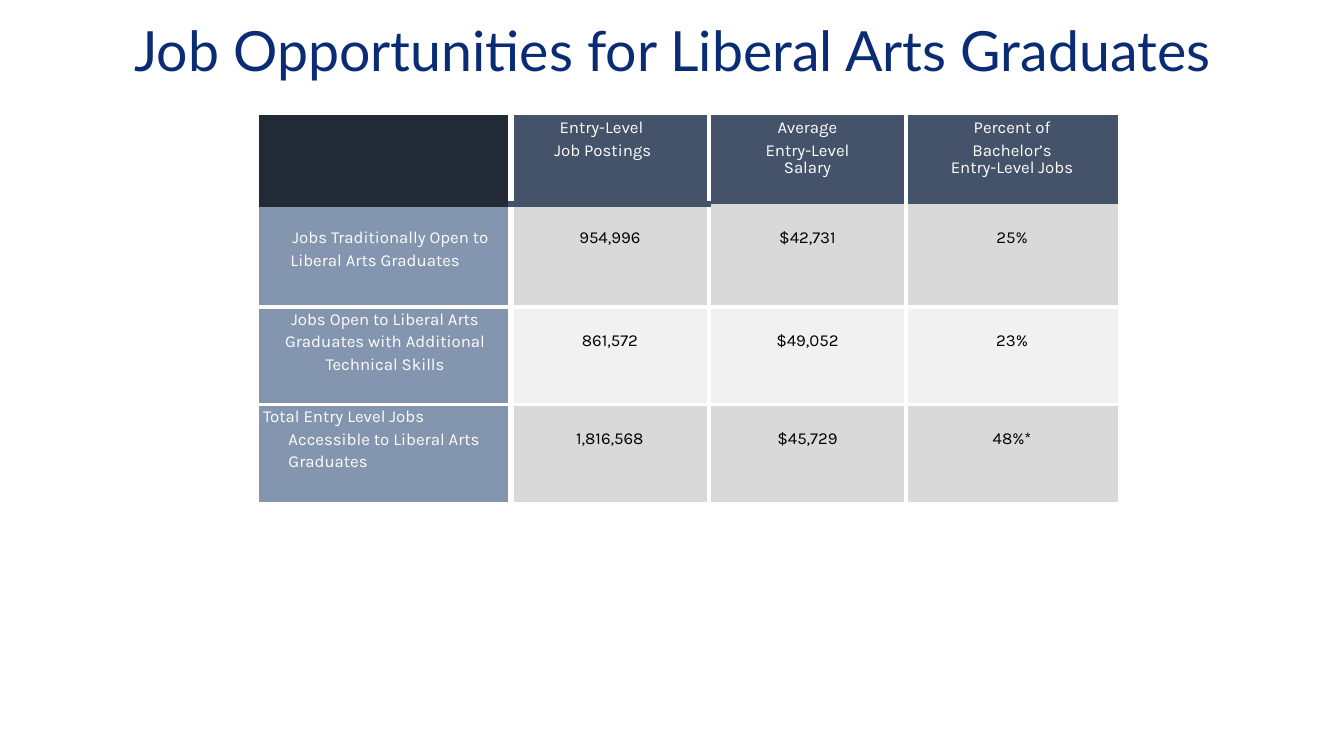
from dataclasses import dataclass

from lxml import etree
from pptx import Presentation
from pptx.dml.color import RGBColor
from pptx.enum.text import MSO_ANCHOR, MSO_AUTO_SIZE, PP_ALIGN
from pptx.oxml.ns import qn
from pptx.util import Cm, Pt

LEFT, CENTER = PP_ALIGN.LEFT, PP_ALIGN.CENTER
MIDDLE = MSO_ANCHOR.MIDDLE
NO_AUTOFIT = MSO_AUTO_SIZE.NONE
TITLE_ONLY = 5


@dataclass(frozen=True)
class Theme:
    title_font: str = "Lato"
    body_font: str = "Karla"
    title_size: float = 39.6
    body_size: float = 12
    title: str = "092C74"
    corner: str = "212A35"
    header: str = "44536A"
    label: str = "8495AF"
    band_dark: str = "D9D9D9"
    band_light: str = "F1F1F1"
    light: str = "FFFFFF"
    dark: str = "000000"
    thin: float = 3
    thick: float = 4.5


@dataclass(frozen=True)
class Para:
    text: str
    align: PP_ALIGN = CENTER
    left: float = 0
    right: float = 0
    first: float = 0
    spacing: object = 1.15


THEME = Theme()
TITLE = "Job Opportunities for Liberal Arts Graduates"
COL_WIDTHS = (6.35, 4.98, 4.98, 5.33)
ROW_HEIGHTS = (2.24, 2.59, 2.46, 2.46)
VALUE_TOP = 0.54

HEADERS = (
    (),
    (Para("Entry-Level Job Postings", LEFT, 1.09, 1.22, 0.13),),
    (Para("Average Entry-Level", left=1.22, right=1.22),
     Para("Salary", spacing=Pt(12.7))),
    (Para("Percent of Bachelor’s", left=0.9, right=0.9),
     Para("Entry-Level Jobs", spacing=Pt(12.7))),
)
LABELS = (
    (Para("Jobs Traditionally Open to Liberal Arts Graduates",
          LEFT, 0.79, 0.2, 0.05), VALUE_TOP),
    (Para("Jobs Open to Liberal Arts Graduates with Additional Technical Skills",
          left=0.58, right=0.58), 0),
    (Para("Total Entry Level Jobs Accessible to Liberal Arts Graduates",
          LEFT, 0.74, 0.6, -0.64), 0),
)
VALUES = (
    ("954,996", "$42,731", "25%"),
    ("861,572", "$49,052", "23%"),
    ("1,816,568", "$45,729", "48%*"),
)


def add_run(p, text, font, size, color):
    r = p.add_run()
    r.text = text
    r.font.name = font
    r.font.size = Pt(size)
    r.font.color.rgb = RGBColor.from_string(color)


def add_title(slide):
    sp = slide.shapes.title
    sp.left, sp.top, sp.width, sp.height = Cm(2.34), Cm(1.02), Cm(29.21), Cm(0.64)
    tf = sp.text_frame
    tf.auto_size = NO_AUTOFIT
    tf.vertical_anchor = MIDDLE
    p = tf.paragraphs[0]
    p.alignment = CENTER
    p.line_spacing = 0.9
    add_run(p, TITLE, THEME.title_font, THEME.title_size, THEME.title)


def set_border(cell, side, line):
    tcPr = cell._tc.get_or_add_tcPr()
    ln = etree.SubElement(tcPr, qn(f"a:ln{side}"))
    if line is None:
        etree.SubElement(ln, qn("a:noFill"))
        return
    color, width = line
    ln.set("w", str(Pt(width)))
    fill = etree.SubElement(ln, qn("a:solidFill"))
    etree.SubElement(fill, qn("a:srgbClr"), val=color)


def vertical_line(edge):
    if edge in (0, len(COL_WIDTHS)):
        return None
    return THEME.light, THEME.thick if edge == 1 else THEME.thin


def horizontal_line(edge, col):
    if edge in (0, len(ROW_HEIGHTS)):
        return None
    if edge == 1:
        color = {0: THEME.corner, 1: THEME.header}.get(col)
        return (color, THEME.thick) if color else None
    return THEME.light, THEME.thin


def cell_fill(row, col):
    if row == 0:
        return THEME.header if col else THEME.corner
    if col == 0:
        return THEME.label
    return THEME.band_dark if row % 2 else THEME.band_light


def cell_content(row, col):
    if row == 0:
        return HEADERS[col], 0
    if col == 0:
        para, top = LABELS[row - 1]
        return (para,), top
    return (Para(VALUES[row - 1][col - 1]),), VALUE_TOP


def fill_text(cell, paras, top, color):
    cell.margin_left = cell.margin_right = cell.margin_bottom = Cm(0)
    cell.margin_top = Cm(top)
    tf = cell.text_frame
    for i, para in enumerate(paras):
        p = tf.add_paragraph() if i else tf.paragraphs[0]
        p.alignment = para.align
        p.line_spacing = para.spacing
        pPr = p._p.get_or_add_pPr()
        for name, value in (("marL", para.left), ("marR", para.right),
                            ("indent", para.first)):
            pPr.set(name, str(Cm(value)))
        add_run(p, para.text, THEME.body_font, THEME.body_size, color)


def style_cell(cell, row, col):
    set_border(cell, "L", vertical_line(col))
    set_border(cell, "R", vertical_line(col + 1))
    set_border(cell, "T", horizontal_line(row, col))
    set_border(cell, "B", horizontal_line(row + 1, col))
    cell.fill.solid()
    cell.fill.fore_color.rgb = RGBColor.from_string(cell_fill(row, col))


def add_jobs_table(slide):
    frame = slide.shapes.add_table(
        len(ROW_HEIGHTS), len(COL_WIDTHS), Cm(6.53), Cm(2.9),
        Cm(sum(COL_WIDTHS)), Cm(sum(ROW_HEIGHTS)))
    table = frame.table
    table.first_row = table.horz_banding = False
    for column, width in zip(table.columns, COL_WIDTHS):
        column.width = Cm(width)
    for row, height in enumerate(ROW_HEIGHTS):
        table.rows[row].height = Cm(height)
        for col in range(len(COL_WIDTHS)):
            cell = table.cell(row, col)
            style_cell(cell, row, col)
            paras, top = cell_content(row, col)
            color = THEME.dark if row and col else THEME.light
            fill_text(cell, paras, top, color)


def main():
    prs = Presentation()
    prs.slide_width, prs.slide_height = Cm(33.87), Cm(19.05)
    slide = prs.slides.add_slide(prs.slide_layouts[TITLE_ONLY])
    add_jobs_table(slide)
    add_title(slide)
    prs.save("out.pptx")


if __name__ == "__main__":
    main()
